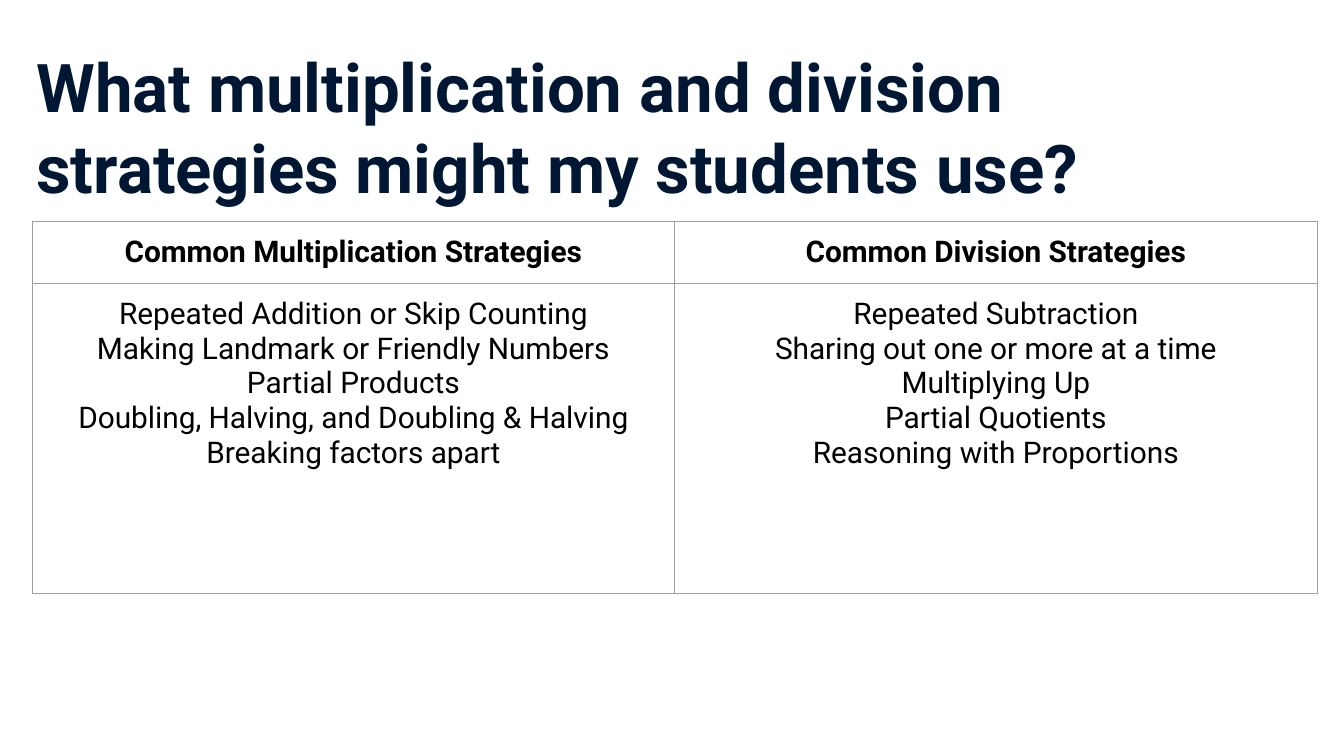
from lxml import etree
from pptx import Presentation
from pptx.dml.color import RGBColor
from pptx.enum import text
from pptx.oxml import ns
from pptx.util import Inches, Pt

FONT = "Roboto"
INSET = 0.1
HEADINGS = ["Common Multiplication Strategies", "Common Division Strategies"]
STRATEGIES = [
    [
        "Repeated Addition or Skip Counting",
        "Making Landmark or Friendly Numbers",
        "Partial Products",
        "Doubling, Halving, and Doubling & Halving",
        "Breaking factors apart",
    ],
    [
        "Repeated Subtraction",
        "Sharing out one or more at a time",
        "Multiplying Up",
        "Partial Quotients",
        "Reasoning with Proportions",
    ],
]


def color(value):
    return RGBColor.from_string(value)


def set_margins(holder):
    holder.margin_left = holder.margin_right = Inches(INSET)
    holder.margin_top = holder.margin_bottom = Inches(INSET)


def style_paragraph(paragraph, size, hue, bold, alignment):
    paragraph.alignment = alignment
    for run in paragraph.runs:
        run.font.name = FONT
        run.font.size = Pt(size)
        run.font.bold = bold
        run.font.color.rgb = color(hue)


def add_borders(cell, hue, width):
    properties = cell._tc.get_or_add_tcPr()
    for position, side in enumerate(("lnL", "lnR", "lnT", "lnB")):
        line = etree.Element(ns.qn(f"a:{side}"), w=str(Pt(width)))
        fill = etree.SubElement(line, ns.qn("a:solidFill"))
        etree.SubElement(fill, ns.qn("a:srgbClr"), val=hue)
        properties.insert(position, line)


def place_title(slide, left, top, width, height):
    title = slide.shapes.title
    title.left, title.top = Inches(left), Inches(top)
    title.width, title.height = Inches(width), Inches(height)
    frame = title.text_frame
    frame.text = "What multiplication and division strategies might my students use?"
    frame.word_wrap = True
    frame.auto_size = text.MSO_AUTO_SIZE.NONE
    frame.vertical_anchor = text.MSO_ANCHOR.TOP
    set_margins(frame)
    question = frame.paragraphs[0]
    question.line_spacing = 1.0
    question.space_before = Pt(0)
    style_paragraph(question, 36, "001733", True, text.PP_ALIGN.LEFT)


def place_strategies(slide, left, top, width, height, heading_height):
    rows = [HEADINGS, ["\n".join(names) for names in STRATEGIES]]
    table = slide.shapes.add_table(
        len(rows), len(HEADINGS),
        Inches(left), Inches(top), Inches(width), Inches(height),
    ).table
    table.horz_banding = False
    table.rows[0].height = Inches(heading_height)
    table.rows[1].height = Inches(height - heading_height)
    for row, contents in enumerate(rows):
        for column, content in enumerate(contents):
            cell = table.cell(row, column)
            cell.text_frame.text = content
            cell.fill.background()
            set_margins(cell)
            add_borders(cell, "9E9E9E", 0.75)
            for paragraph in cell.text_frame.paragraphs:
                style_paragraph(paragraph, 16, "000000", row == 0, text.PP_ALIGN.CENTER)


def main():
    deck = Presentation()
    deck.slide_width = Inches(10)
    deck.slide_height = deck.slide_width * 9 // 16
    slide = deck.slides.add_slide(deck.slide_layouts[5])
    slide.background.fill.solid()
    slide.background.fill.fore_color.rgb = color("FFFFFF")
    place_title(slide, 0.17, 0.24, 9.32, 0.63)
    place_strategies(slide, 0.24, 1.65, 9.56, 2.66, 0.35)
    deck.save("out.pptx")


if __name__ == "__main__":
    main()
